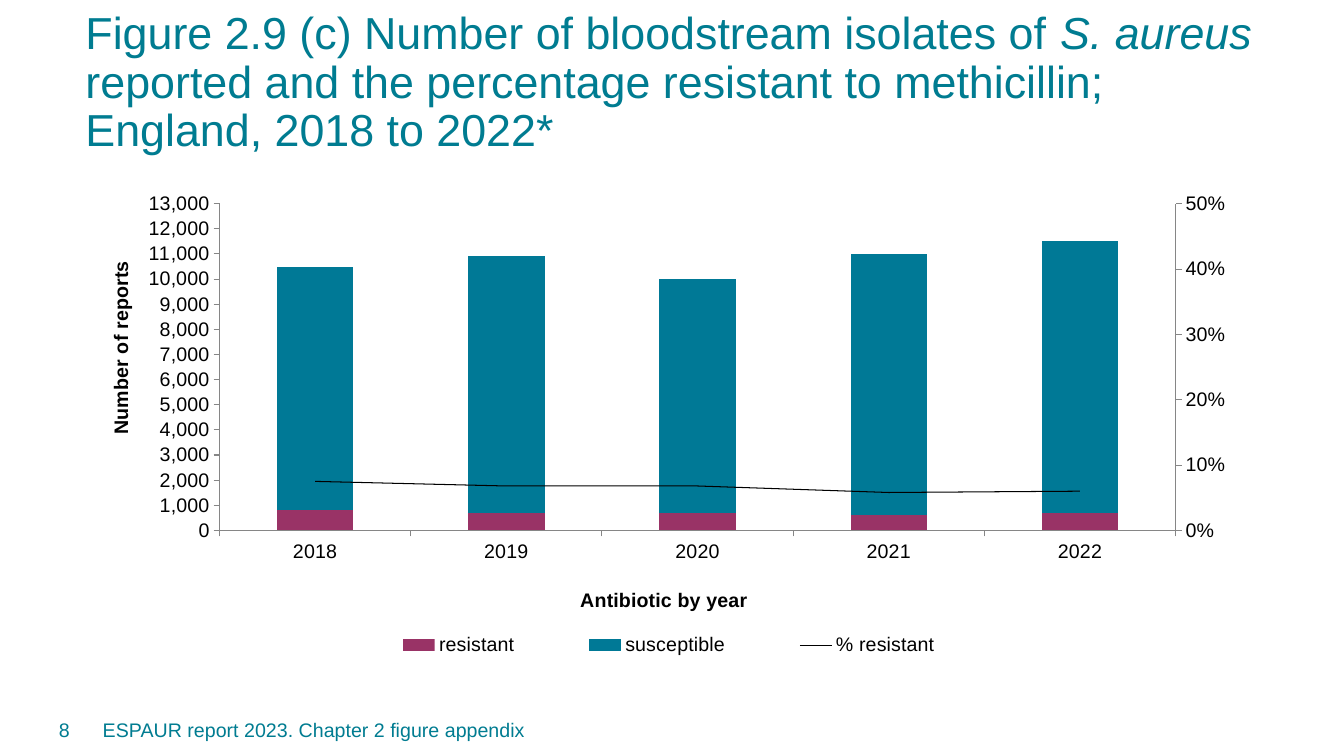
from dataclasses import dataclass

from lxml import etree
from pptx import Presentation
from pptx.chart.data import CategoryChartData
from pptx.dml.color import RGBColor
from pptx.enum import chart as ch, text
from pptx.oxml import parse_xml
from pptx.oxml.ns import nsdecls, qn
from pptx.util import Cm, Pt


@dataclass(frozen=True)
class Theme:
    font: str = "Arial"
    teal: RGBColor = RGBColor(0x00, 0x7C, 0x91)
    resistant: RGBColor = RGBColor(0x99, 0x33, 0x66)
    susceptible: RGBColor = RGBColor(0x00, 0x79, 0x96)
    black: RGBColor = RGBColor(0, 0, 0)
    axis: RGBColor = RGBColor(0x86, 0x86, 0x86)
    title_size: Pt = Pt(32)
    text_size: Pt = Pt(14)


theme = Theme()


def style(font, size, color):
    font.name, font.size, font.color.rgb = theme.font, size, color


def place(element, index, **fractions):
    """Give a chart part a manual layout, in fractions of the chart area."""
    for old in element.findall(qn("c:layout")):
        element.remove(old)
    layout = etree.Element(qn("c:layout"))
    manual = etree.SubElement(layout, qn("c:manualLayout"))
    if element.tag == qn("c:plotArea"):
        etree.SubElement(manual, qn("c:layoutTarget"), val="inner")
    for mode in ("xMode", "yMode"):
        etree.SubElement(manual, qn(f"c:{mode}"), val="edge")
    for name, value in fractions.items():
        etree.SubElement(manual, qn(f"c:{name}"), val=str(value))
    element.insert(index, layout)


prs = Presentation()
prs.slide_width, prs.slide_height = Cm(33.87), Cm(19.05)
s = prs.slides.add_slide(prs.slide_layouts[5])

# Title
title = s.shapes.title
title.left, title.top, title.width, title.height = Cm(1.9), Cm(0.15), Cm(30.91), Cm(2.69)
tf = title.text_frame
tf.auto_size = text.MSO_AUTO_SIZE.NONE
tf.vertical_anchor = text.MSO_ANCHOR.TOP
p = tf.paragraphs[0]
p.alignment = text.PP_ALIGN.LEFT
p.line_spacing = 0.9
style(p.font, theme.title_size, theme.teal)
for words, italic in (
    ("Figure 2.9 (c) Number of bloodstream isolates of ", False),
    ("S. aureus ", True),
    ("reported and the percentage resistant to methicillin; England, 2018 to 2022*", False),
):
    r = p.add_run()
    r.text = words
    r.font.italic = italic

# Stacked columns
data = CategoryChartData(number_format="#,##0")
data.categories = ["2018", "2019", "2020", "2021", "2022"]
data.add_series("resistant", (800, 700, 700, 600, 700))
data.add_series("susceptible", (9700, 10200, 9300, 10400, 10800))
data.add_series("% resistant", (0.075, 0.068, 0.068, 0.058, 0.06), number_format="0%")
chart = s.shapes.add_chart(
    ch.XL_CHART_TYPE.COLUMN_STACKED, Cm(2.34), Cm(4.52), Cm(29.03), Cm(12.29), data
).chart
style(chart.font, theme.text_size, theme.black)
chart.has_title = False
columns = chart.plots[0]
columns.gap_width, columns.overlap = 150, 100
columns.vary_by_categories = False
for series, color in zip(columns.series, (theme.resistant, theme.susceptible)):
    series.format.fill.solid()
    series.format.fill.fore_color.rgb = color

# Axes
reports = chart.value_axis
reports.minimum_scale, reports.maximum_scale, reports.major_unit = 0, 13000, 1000
reports.has_major_gridlines = False
reports.tick_labels.number_format = "#,##0"
reports.tick_labels.number_format_is_linked = False
for axis, words, x, y in (
    (chart.category_axis, "Antibiotic by year", 0.42, 0.83),
    (reports, "Number of reports", 0.01, 0.16),
):
    axis.major_tick_mark = ch.XL_TICK_MARK.OUTSIDE
    axis.format.line.color.rgb = theme.axis
    axis.format.line.width = Pt(0.75)
    tf = axis.axis_title.text_frame
    tf.text = words
    style(tf.paragraphs[0].font, theme.text_size, theme.black)
    tf.paragraphs[0].font.bold = True
    place(axis.axis_title._element, 1, x=x, y=y)
body = reports.axis_title._element.find(f".//{qn('a:bodyPr')}")
body.set("rot", "-5400000")
body.set("vert", "horz")

# Percentage line on a second axis
plot_area = chart._chartSpace.chart.plotArea
bar = plot_area.find(qn("c:barChart"))
percent = bar.findall(qn("c:ser"))[2]
bar.remove(percent)
for flag in percent.findall(qn("c:invertIfNegative")):
    percent.remove(flag)
line_chart = parse_xml(
    f'<c:lineChart {nsdecls("c")}><c:grouping val="standard"/><c:varyColors val="0"/>'
    '<c:marker val="1"/><c:axId val="5001"/><c:axId val="5002"/></c:lineChart>'
)
line_chart.insert(2, percent)
bar.addnext(line_chart)
hidden_years = parse_xml(
    f'<c:catAx {nsdecls("c")}><c:axId val="5001"/>'
    '<c:scaling><c:orientation val="minMax"/></c:scaling><c:delete val="1"/>'
    '<c:axPos val="b"/><c:crossAx val="5002"/><c:crosses val="autoZero"/></c:catAx>'
)
percent_axis = parse_xml(
    f'<c:valAx {nsdecls("c", "a")}><c:axId val="5002"/>'
    '<c:scaling><c:orientation val="minMax"/><c:max val="0.5"/><c:min val="0"/></c:scaling>'
    '<c:delete val="0"/><c:axPos val="r"/><c:numFmt formatCode="0%" sourceLinked="0"/>'
    '<c:majorTickMark val="out"/><c:minorTickMark val="none"/><c:tickLblPos val="nextTo"/>'
    f'<c:spPr><a:ln w="9525"><a:solidFill><a:srgbClr val="{theme.axis}"/></a:solidFill></a:ln></c:spPr>'
    '<c:crossAx val="5001"/><c:crosses val="max"/><c:crossBetween val="between"/>'
    '<c:majorUnit val="0.1"/></c:valAx>'
)
last_axis = plot_area.findall(qn("c:valAx"))[-1]
last_axis.addnext(hidden_years)
hidden_years.addnext(percent_axis)
line = chart.plots[1].series[0]
line.smooth = False
line.marker.style = ch.XL_MARKER_STYLE.NONE
line.format.line.color.rgb = theme.black
line.format.line.width = Pt(0.75)

# Legend and plot positions
chart.has_legend = True
chart.legend.position = ch.XL_LEGEND_POSITION.BOTTOM
chart.legend.include_in_layout = False
place(chart.legend._element, 1, x=0.21, y=0.92, w=0.58, h=0.07)
place(plot_area, 0, x=0.11, y=0.05, w=0.83, h=0.67)

# Footer
for words, left, width, align in (
    ("8", 0.36, 1.65, text.PP_ALIGN.RIGHT),
    ("ESPAUR report 2023. Chapter 2 figure appendix", 2.34, 27.79, text.PP_ALIGN.LEFT),
):
    tf = s.shapes.add_textbox(Cm(left), Cm(17.88), Cm(width), Cm(1.02)).text_frame
    tf.word_wrap = True
    tf.vertical_anchor = text.MSO_ANCHOR.MIDDLE
    p = tf.paragraphs[0]
    p.text = words
    p.alignment = align
    style(p.font, theme.text_size, theme.teal)

prs.save("out.pptx")
